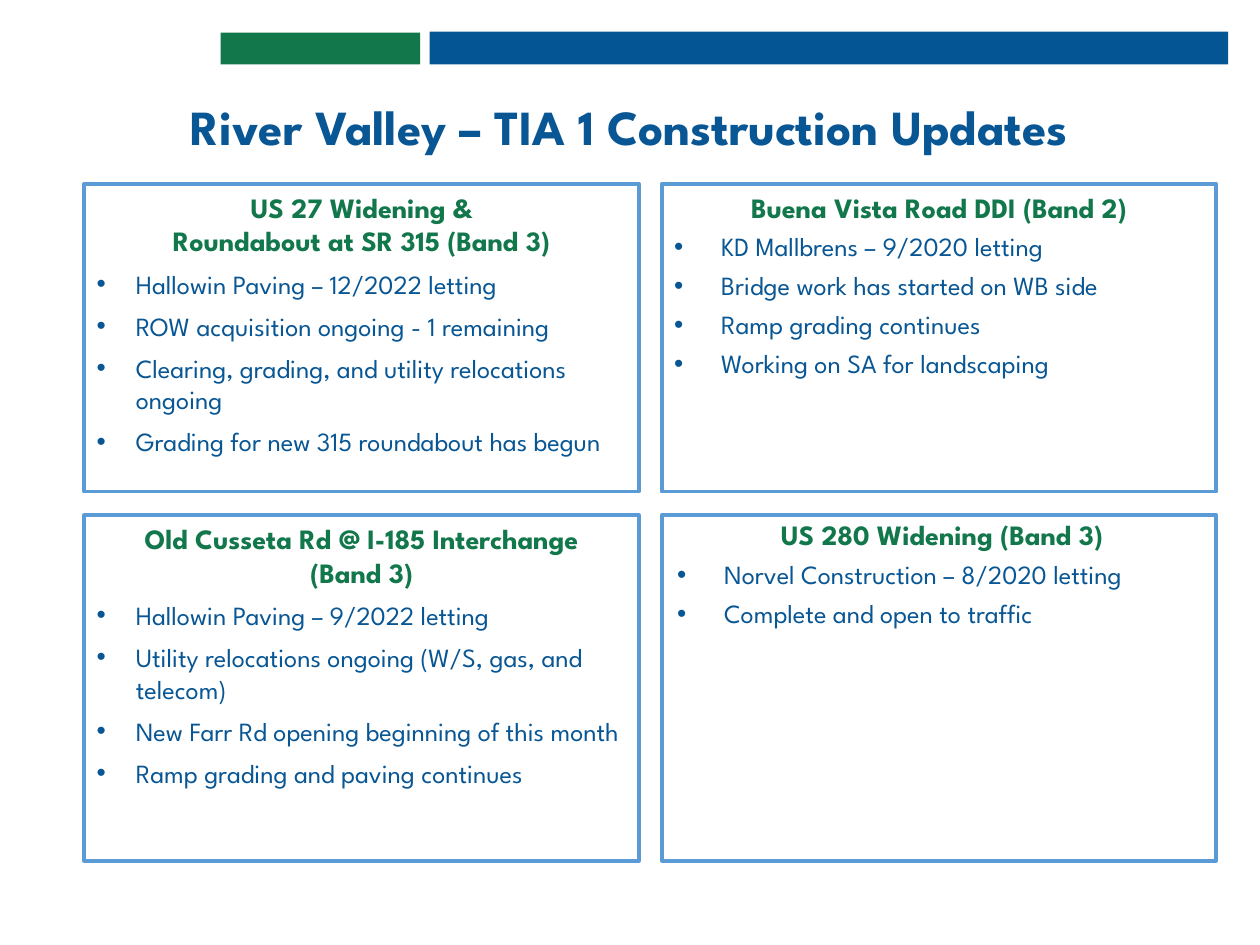
from lxml.etree import SubElement
from pptx import Presentation
from pptx.dml.color import RGBColor
from pptx.enum.shapes import MSO_SHAPE
from pptx.enum.text import MSO_ANCHOR, PP_ALIGN
from pptx.oxml.ns import qn
from pptx.util import Cm, Pt

FONT = "League Spartan"
GREEN, BLUE = "12784B", "085694"


def color(hex_code):
    return RGBColor.from_string(hex_code)


def write(paragraph, text, size, hex_code, bold=False, spacing=1.0, indent=None):
    """Fill a paragraph: bulleted when an indent in cm is given, else centred."""
    paragraph.text = text
    paragraph.line_spacing = spacing
    if indent is None:
        paragraph.alignment = PP_ALIGN.CENTER
    else:
        paragraph.space_before = Pt(6)
        properties = paragraph._p.get_or_add_pPr()
        properties.set("marL", str(Cm(indent)))
        properties.set("indent", str(-Cm(indent)))
        SubElement(properties, qn("a:buFont"), typeface="Arial")
        SubElement(properties, qn("a:buChar"), char="•")
    for run in paragraph.runs:
        run.font.name = FONT
        run.font.size = Pt(size)
        run.font.bold = bold
        run.font.color.rgb = color(hex_code)


prs = Presentation()
prs.slide_width, prs.slide_height = Cm(25.4), Cm(19.05)
slide = prs.slides.add_slide(prs.slide_layouts[6])

# Header bars
for left, top, width, height, fill in [
    (8.66, 0.64, 16.1, 0.66, "035594"),
    (4.45, 0.66, 4.02, 0.64, GREEN),
]:
    bar = slide.shapes.add_shape(
        MSO_SHAPE.RECTANGLE, Cm(left), Cm(top), Cm(width), Cm(height))
    bar.shadow.inherit = False
    bar.fill.solid()
    bar.fill.fore_color.rgb = color(fill)
    bar.line.fill.background()

title = slide.shapes.add_textbox(Cm(0.58), Cm(2.06), Cm(24.21), Cm(1.22)).text_frame
title.word_wrap = True
title.vertical_anchor = MSO_ANCHOR.BOTTOM
write(title.paragraphs[0], "River Valley – TIA 1 Construction Updates", 28, BLUE,
      bold=True, spacing=0.9)

# Project panels: column, row, text shift, bullet indent,
# heading spacing, bullet spacing, headings, bullets
COLUMNS = [1.7, 13.34]
ROWS = [(3.71, 6.2), (10.39, 6.96)]
PANEL_WIDTH = 11.18
projects = [
    (0, 0, 0, 0.79, 1.0, 1.0,
     ["US 27 Widening &", "Roundabout at SR 315 (Band 3)"],
     ["Hallowin Paving – 12/2022 letting",
      "ROW acquisition ongoing - 1 remaining",
      "Clearing, grading, and utility relocations ongoing",
      "Grading for new 315 roundabout has begun"]),
    (1, 0, 0, 0.95, 1.0, 0.9,
     ["Buena Vista Road DDI (Band 2)"],
     ["KD Mallbrens – 9/2020 letting",
      "Bridge work has started on WB side",
      "Ramp grading continues",
      "Working on SA for landscaping"]),
    (0, 1, 0, 0.79, 1.0, 1.0,
     ["Old Cusseta Rd @ I-185 Interchange", "(Band 3)"],
     ["Hallowin Paving – 9/2022 letting",
      "Utility relocations ongoing (W/S, gas, and telecom)",
      "New Farr Rd opening beginning of this month",
      "Ramp grading and paving continues"]),
    (1, 1, 0.06, 0.95, 0.9, 0.9,
     ["US 280 Widening (Band 3)"],
     ["Norvel Construction – 8/2020 letting",
      "Complete and open to traffic"]),
]

for (column, row, shift, indent, heading_spacing, bullet_spacing,
     headings, bullets) in projects:
    left = COLUMNS[column]
    top, height = ROWS[row]
    panel = slide.shapes.add_shape(
        MSO_SHAPE.RECTANGLE, Cm(left), Cm(top), Cm(PANEL_WIDTH), Cm(height))
    panel.shadow.inherit = False
    panel.fill.solid()
    panel.fill.fore_color.rgb = color("FFFFFF")
    panel.line.color.rgb = color("5B9BD5")
    panel.line.width = Pt(2.25)

    update = slide.shapes.add_textbox(
        Cm(left + shift), Cm(top), Cm(PANEL_WIDTH), Cm(5.69)).text_frame
    update.word_wrap = True
    update.text = "\n".join(headings + bullets)
    for number, paragraph in enumerate(update.paragraphs):
        if number < len(headings):
            write(paragraph, paragraph.text, 16, GREEN, bold=True,
                  spacing=heading_spacing)
        else:
            write(paragraph, paragraph.text, 15, BLUE,
                  spacing=bullet_spacing, indent=indent)

prs.save("out.pptx")
